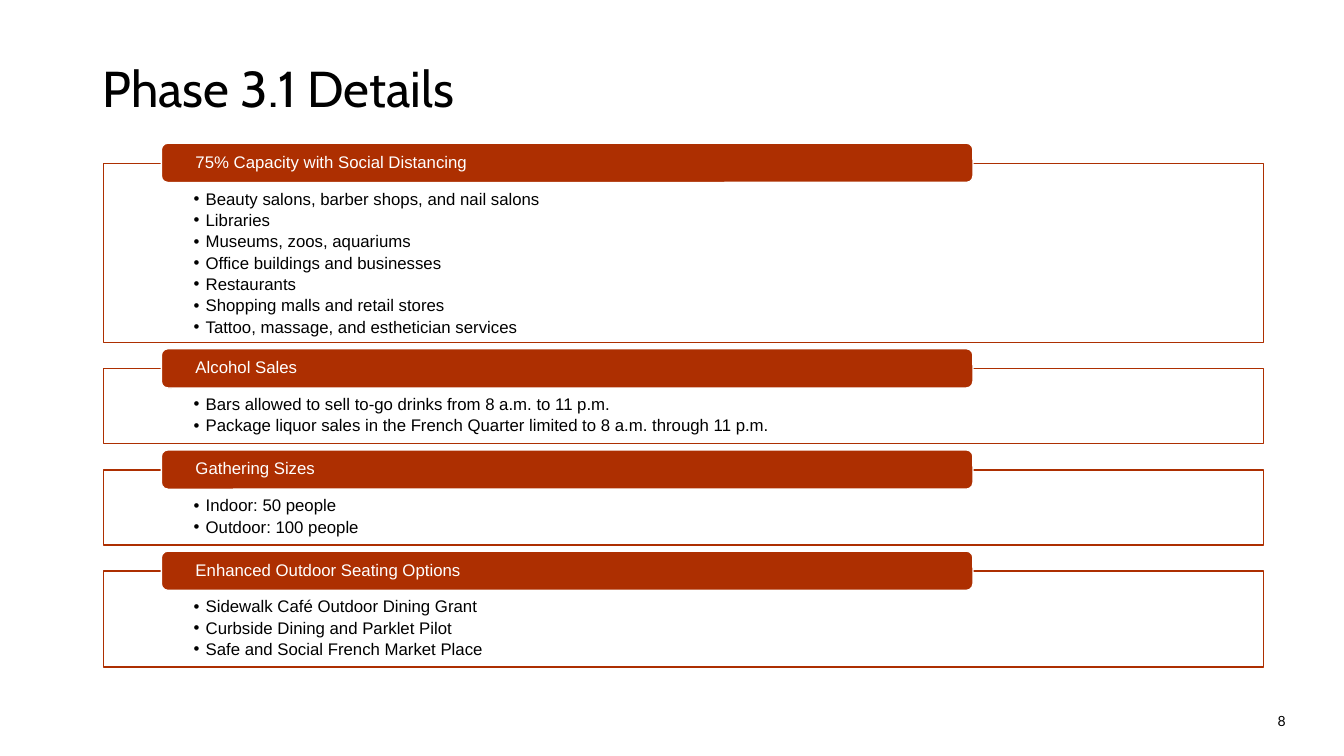
from lxml.etree import SubElement
from pptx import Presentation
from pptx.dml.color import RGBColor
from pptx.enum.shapes import MSO_SHAPE as Shape
from pptx.enum.text import MSO_ANCHOR as Anchor, PP_ALIGN as Align
from pptx.oxml.ns import qn
from pptx.util import Inches, Pt

COLORS = {"text": "000000", "paper": "FFFFFF", "rust": "AD2F01"}

SECTIONS = [
    ("75% Capacity with Social Distancing", [
        "Beauty salons, barber shops, and nail salons",
        "Libraries",
        "Museums, zoos, aquariums",
        "Office buildings and businesses",
        "Restaurants",
        "Shopping malls and retail stores",
        "Tattoo, massage, and esthetician services",
    ]),
    ("Alcohol Sales", [
        "Bars allowed to sell to-go drinks from 8 a.m. to 11 p.m.",
        "Package liquor sales in the French Quarter limited to 8 a.m. through 11 p.m.",
    ]),
    ("Gathering Sizes", [
        "Indoor: 50 people",
        "Outdoor: 100 people",
    ]),
    ("Enhanced Outdoor Seating Options", [
        "Sidewalk Café Outdoor Dining Grant",
        "Curbside Dining and Parklet Pilot",
        "Safe and Social French Market Place",
    ]),
]

LINE_PITCH = 0.207  # inches per bullet line
FRAME_PADDING = 0.33
SECTION_GAP = 0.26


def rgb(name):
    return RGBColor.from_string(COLORS[name])


def add_bullet(paragraph):
    properties = paragraph._p.get_or_add_pPr()
    properties.set("marL", str(Inches(0.12)))
    properties.set("indent", str(Inches(-0.12)))
    SubElement(properties, qn("a:buFont"), typeface="Arial")
    SubElement(properties, qn("a:buChar"), char="•")


def write_text(shape, lines, font="Arial", size=12, color="text", align=Align.LEFT,
               anchor=Anchor.MIDDLE, insets=(0.1, 0.05, 0.1, 0.05),
               bullets=False, line_spacing=None, space_after=0):
    frame = shape.text_frame
    frame.word_wrap = True
    frame.vertical_anchor = anchor
    (frame.margin_left, frame.margin_top,
     frame.margin_right, frame.margin_bottom) = map(Inches, insets)
    frame.text = "\n".join(lines)
    for paragraph in frame.paragraphs:
        if bullets:
            add_bullet(paragraph)
        paragraph.alignment = align
        paragraph.space_after = Pt(space_after)
        if line_spacing:
            paragraph.line_spacing = line_spacing
        paragraph.font.name = font
        paragraph.font.size = Pt(size)
        paragraph.font.color.rgb = rgb(color)


def add_box(slide, kind, left, top, width, height, fill, line):
    shape = slide.shapes.add_shape(kind, *map(Inches, (left, top, width, height)))
    shape.shadow.inherit = False
    shape.fill.solid()
    shape.fill.fore_color.rgb = rgb(fill)
    shape.line.color.rgb = rgb(line)
    shape.line.width = Pt(1)
    return shape


def add_title(slide, text, left, top, width, height):
    title = slide.shapes.title
    title.left, title.top, title.width, title.height = map(
        Inches, (left, top, width, height))
    write_text(title, [text], font="Cabin", size=36)


def add_section(slide, heading, items, left, top, width, height):
    # Outlined frame with its bullets
    frame = add_box(slide, Shape.RECTANGLE, left, top, width, height, "paper", "rust")
    write_text(frame, items, anchor=Anchor.TOP, insets=(0.89, 0.27, 0.89, 0.09),
               bullets=True, line_spacing=0.9, space_after=2.3)
    # Heading bar across the frame's top edge
    bar = add_box(slide, Shape.ROUNDED_RECTANGLE, left + 0.57, top - 0.2,
                  width * 0.7, 0.39, "rust", "paper")
    write_text(bar, [heading], color="paper", insets=(0.32, 0, 0.32, 0),
               line_spacing=0.9)


def add_section_list(slide, left, top, width):
    for heading, items in SECTIONS:
        height = FRAME_PADDING + LINE_PITCH * len(items)
        add_section(slide, heading, items, left, top, width, height)
        top += height + SECTION_GAP


def add_page_number(slide, number, left, top, width, height):
    box = slide.shapes.add_textbox(*map(Inches, (left, top, width, height)))
    write_text(box, [number], font="Lato", size=10, align=Align.RIGHT)


def main():
    presentation = Presentation()
    presentation.slide_width = Inches(13.33)
    presentation.slide_height = Inches(7.5)
    slide = presentation.slides.add_slide(presentation.slide_layouts[5])
    add_title(slide, "Phase 3.1 Details", 0.92, 0.4, 11.5, 0.94)
    add_section_list(slide, 1.03, 1.62, 11.5)
    add_page_number(slide, "8", 9.42, 6.95, 3.43, 0.4)
    presentation.save("out.pptx")


if __name__ == "__main__":
    main()
